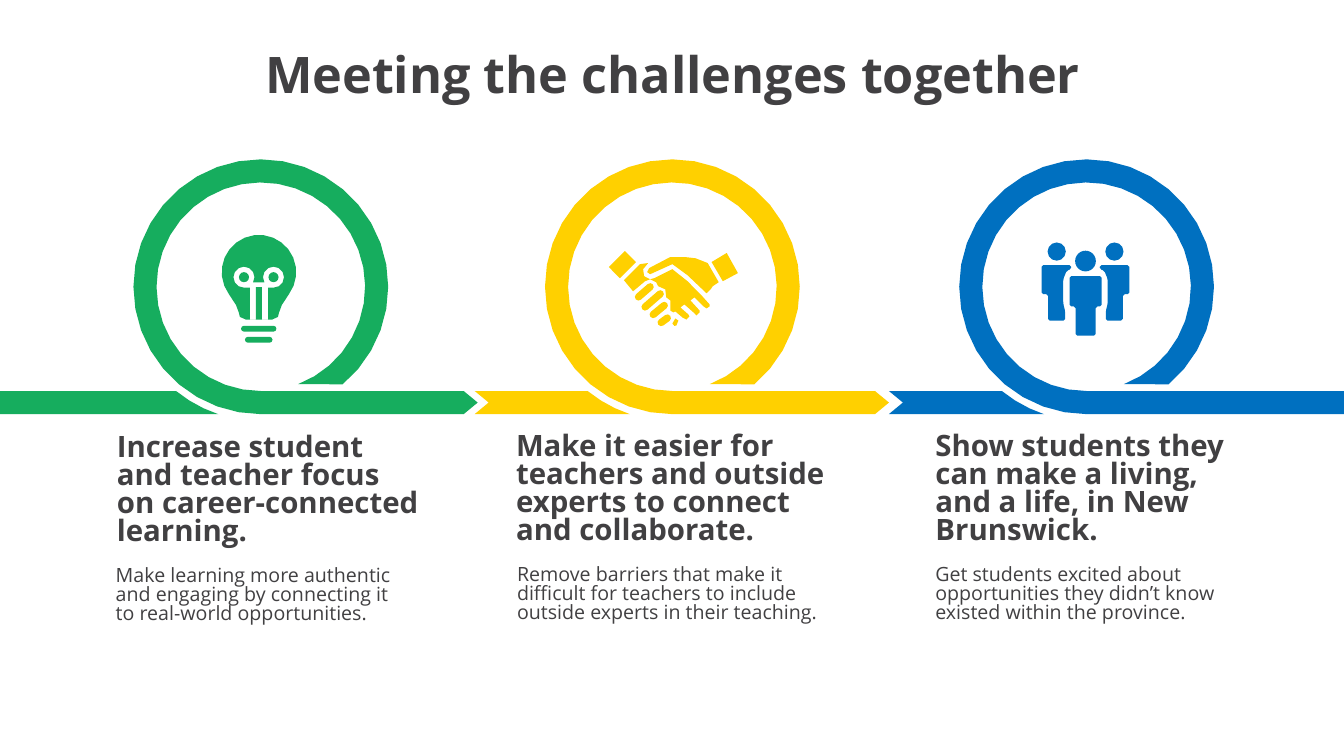
from math import atan2, ceil, cos, degrees, hypot, radians, sin

from pptx import Presentation
from pptx.dml.color import RGBColor
from pptx.enum.shapes import MSO_SHAPE
from pptx.enum.text import MSO_ANCHOR, MSO_AUTO_SIZE, PP_ALIGN
from pptx.oxml.ns import qn
from pptx.util import Pt

GREEN = RGBColor(0x16, 0xAD, 0x5E)
YELLOW = RGBColor(0xFF, 0xD0, 0x00)
BLUE = RGBColor(0x00, 0x70, 0xC0)
INK = RGBColor(0x41, 0x40, 0x42)
FONT = "Open Sans"
UNITS = 100  # freeform units per point

LOOP_Y, OUTER, INNER, GAP_RADIUS = 204.8, 91, 74.5, 96
BAND_TOP, BAND_BOTTOM, ARROW = LOOP_Y + INNER, LOOP_Y + OUTER, 10

# Loop centre, tail start, notch depth, band end, tip length, colour
RIBBONS = [
    (186.3, 0, 0, 331.2, ARROW, GREEN),
    (480.3, 339.1, ARROW, 625, ARROW, YELLOW),
    (776.2, 635, ARROW, 960, 0, BLUE),
]

# Heading box, heading, detail box, detail; boxes are left, top, width, height
CHALLENGES = [
    ((76.3, 306.7, 232.6, 95), "Increase student and teacher focus on career-connected learning.",
     (75.6, 401.8, 220.3, 107), "Make learning more authentic and engaging by connecting it "
     "to real-world opportunities."),
    ((361.4, 306, 235.4, 95), "Make it easier for teachers and outside experts to connect "
     "and collaborate.",
     (362.2, 401, 229.7, 107), "Remove barriers that make it difficult for teachers to include "
     "outside experts in their teaching."),
    ((661, 306, 232.6, 95), "Show students they can make a living, and a life, in New Brunswick.",
     (661, 401, 223.2, 80), "Get students excited about opportunities they didn’t know "
     "existed within the province."),
]

CUFFS = [
    [(7.9, 19.4), (19.4, 7.9), (11.5, 0), (0, 11.5)],
    [(81.4, 21.6), (92.2, 15.8), (84.2, 1.4), (73.4, 7.9)],
]
FINGERS = [
    ((21.2, 32.8), (29.5, 25.6)), ((25.9, 40), (36.7, 30.6)),
    ((31.7, 45.4), (39.6, 38.9)), ((37.4, 51.1), (41.8, 47.9)),
]
HANDS = [
    [(48.2, 53.3), (49.7, 49.7), (47.5, 48.2), (45.4, 51.8), (46.8, 53.5)],
    [(72.7, 27.4), (74.2, 25.2), (78.5, 22.3), (70.6, 8.6), (62, 5.2), (54, 4.3), (43.9, 4.3),
     (28.8, 12.2), (27.4, 15.1), (29.5, 16.6), (45.4, 9.4), (56.2, 17.3), (69.8, 30.2)],
    [(55.4, 49), (57.6, 46.8), (56.9, 45.4), (51.1, 40.3), (54, 38.2), (60.5, 43.9),
     (62.6, 46.1), (64.8, 43.9), (64.8, 42.5), (58.3, 35.3), (61.2, 33.1), (67.7, 39.6),
     (69.8, 41), (72, 39.6), (72, 38.2), (66.2, 31.7), (56.2, 21.6), (45.4, 13), (32.4, 19.4),
     (29.5, 20.2), (25.2, 18), (24.5, 13), (28.1, 8.6), (22.3, 9.4), (10.8, 20.9),
     (17.3, 28.8), (25.9, 21.6), (29.5, 20.2), (33.8, 22.3), (35.3, 25.2), (40.3, 27.4),
     (41, 33.1), (43.9, 35.3), (43.9, 42.5), (46.1, 43.9), (47.5, 43.2), (52.6, 47.5)],
]
FRONT_BODY = [(20.2, 24.5), (43.2, 24.5), (43.2, 46.1), (38.9, 46.1), (38.9, 67),
              (24.5, 67), (24.5, 46.1), (20.2, 46.1)]
SIDE_BODY = [(41.8, 16.6), (62.9, 16.6), (62.9, 37.4), (58.3, 37.4), (58.3, 56.2),
             (46.1, 56.2), (46.1, 49.7), (47.5, 44), (47.5, 26.6), (45, 20.5), (41.8, 19.5)]
HEADS = [(31.6, 13.7, 7.4), (52.2, 6.9, 6.5), (11, 6.9, 6.5)]


def arc(x, y, radius, start, end):
    """Points on an arc; angles in degrees, clockwise from the right."""
    step = 10 if radius > 50 else 15 if radius > 20 else 30 if radius > 5 else 45
    steps = ceil(abs(end - start) / step)
    angles = [radians(start + (end - start) * i / steps) for i in range(steps + 1)]
    return [(x + radius * cos(a), y + radius * sin(a)) for a in angles]


def capsule(start, end, radius):
    angle = degrees(atan2(end[1] - start[1], end[0] - start[0]))
    return arc(*start, radius, angle + 90, angle + 270) + arc(*end, radius, angle - 90, angle + 90)


def cut_corners(corners, depth):
    outline = []
    for i, (x, y) in enumerate(corners):
        for nx, ny in (corners[i - 1], corners[(i + 1) % len(corners)]):
            share = min(depth / hypot(nx - x, ny - y), 0.5)
            outline.append((x + (nx - x) * share, y + (ny - y) * share))
    return outline


def paint(shape, color):
    shape.shadow.inherit = False
    shape.fill.solid()
    shape.fill.fore_color.rgb = color
    shape.line.fill.background()


def add_outline(page, contours, color, left=0, top=0):
    scaled = [[((left + x) * UNITS, (top + y) * UNITS) for x, y in c] for c in contours]
    builder = page.shapes.build_freeform(*scaled[0][0], scale=Pt(1) / UNITS)
    for number, contour in enumerate(scaled):
        if number:
            builder.move_to(*contour[0])
        builder.add_line_segments(contour[1:], close=True)
    paint(builder.convert_to_shape(), color)


def add_dot(page, x, y, radius, color):
    dot = page.shapes.add_shape(MSO_SHAPE.OVAL, Pt(x - radius), Pt(y - radius),
                                Pt(2 * radius), Pt(2 * radius))
    paint(dot, color)


def add_ribbon(page, center, start, notch, end, tip, color):
    middle = (BAND_TOP + BAND_BOTTOM) / 2
    tail = [(start, BAND_TOP), (start + notch, middle), (start, BAND_BOTTOM)]
    tail += arc(center, LOOP_Y, GAP_RADIUS, 108.4, 129)
    loop = [(end, BAND_TOP)] + arc(center, LOOP_Y, INNER, 90, 429)
    loop += arc(center, LOOP_Y, OUTER, 410, 90)
    loop += [(end, BAND_BOTTOM), (end + tip, middle)]
    add_outline(page, [tail], color)
    add_outline(page, [loop], color)


def add_bulb(page, left, top):
    glass = arc(26.6, 26.6, 26.6, 143.6, 396.4) + [
        (43, 50), (41, 55.4), (40.2, 58.6), (36, 60.5),
        (17.3, 60.5), (13, 58.6), (12.2, 55.4), (10.2, 50)]
    filament = [(20.2, 60.5), (20.2, 37.7)] + arc(15.9, 30.2, 7.5, 90, 390)
    filament += arc(37, 30.2, 7.5, 150, 450) + [(33.1, 37.7), (33.1, 60.5)]
    stem = [(24.5, 37.4), (28.8, 37.4), (28.8, 60.5), (24.5, 60.5)]
    base = [capsule((15.9, 67), (37, 67), 2.1), capsule((18.7, 74.9), (34.2, 74.9), 2.1)]
    add_outline(page, [glass, filament, stem, *base], GREEN, left, top)
    for x in (15.9, 37):
        add_dot(page, left + x, top + 30.2, 3.6, GREEN)


def add_handshake(page, left, top):
    fingers = [capsule(*finger, 2.6) for finger in FINGERS]
    add_outline(page, CUFFS + fingers + HANDS, YELLOW, left, top)


def add_people(page, left, top):
    mirrored = [(63.2 - x, y) for x, y in SIDE_BODY]
    bodies = [cut_corners(body, 1.2) for body in (FRONT_BODY, SIDE_BODY, mirrored)]
    add_outline(page, bodies, BLUE, left, top)
    for x, y, radius in HEADS:
        add_dot(page, left + x, top + y, radius, BLUE)


def fill_text(box, place, text, size, bold, centered=False):
    box.left, box.top, box.width, box.height = (Pt(length) for length in place)
    frame = box.text_frame
    frame.word_wrap = True
    frame.auto_size = MSO_AUTO_SIZE.NONE
    frame.vertical_anchor = MSO_ANCHOR.TOP
    para = frame.paragraphs[0]
    para.alignment = PP_ALIGN.CENTER if centered else PP_ALIGN.LEFT
    para.space_before = Pt(0)
    para.line_spacing = 1.0 if centered else 0.8
    props = para._p.get_or_add_pPr()
    props.set("marL", "0")
    props.set("indent", "0")
    props.append(props.makeelement(qn("a:buNone"), {}))
    span = para.add_run()
    span.text = text
    span.font.name = FONT
    span.font.size = Pt(size)
    span.font.bold = bold
    span.font.color.rgb = INK


def main():
    deck = Presentation()
    deck.slide_width, deck.slide_height = Pt(960), Pt(540)
    page = deck.slides.add_slide(deck.slide_layouts.get_by_name("Comparison"))
    title, *bodies = page.placeholders
    for ribbon in RIBBONS:
        add_ribbon(page, *ribbon)
    for body, (place, heading, detail_place, detail) in zip(bodies, CHALLENGES):
        fill_text(body, place, heading, 21, True)
        detail_box = page.shapes.add_textbox(*(Pt(length) for length in detail_place))
        fill_text(detail_box, detail_place, detail, 14, False)
    for spare in bodies[len(CHALLENGES):]:
        spare.element.getparent().remove(spare.element)
    fill_text(title, (77.8, 27.4, 805.7, 51), "Meeting the challenges together", 36, True, True)
    add_people(page, 743.8, 172.8)
    add_handshake(page, 434.9, 179.3)
    add_bulb(page, 158.4, 167.8)
    deck.save("out.pptx")


if __name__ == "__main__":
    main()
